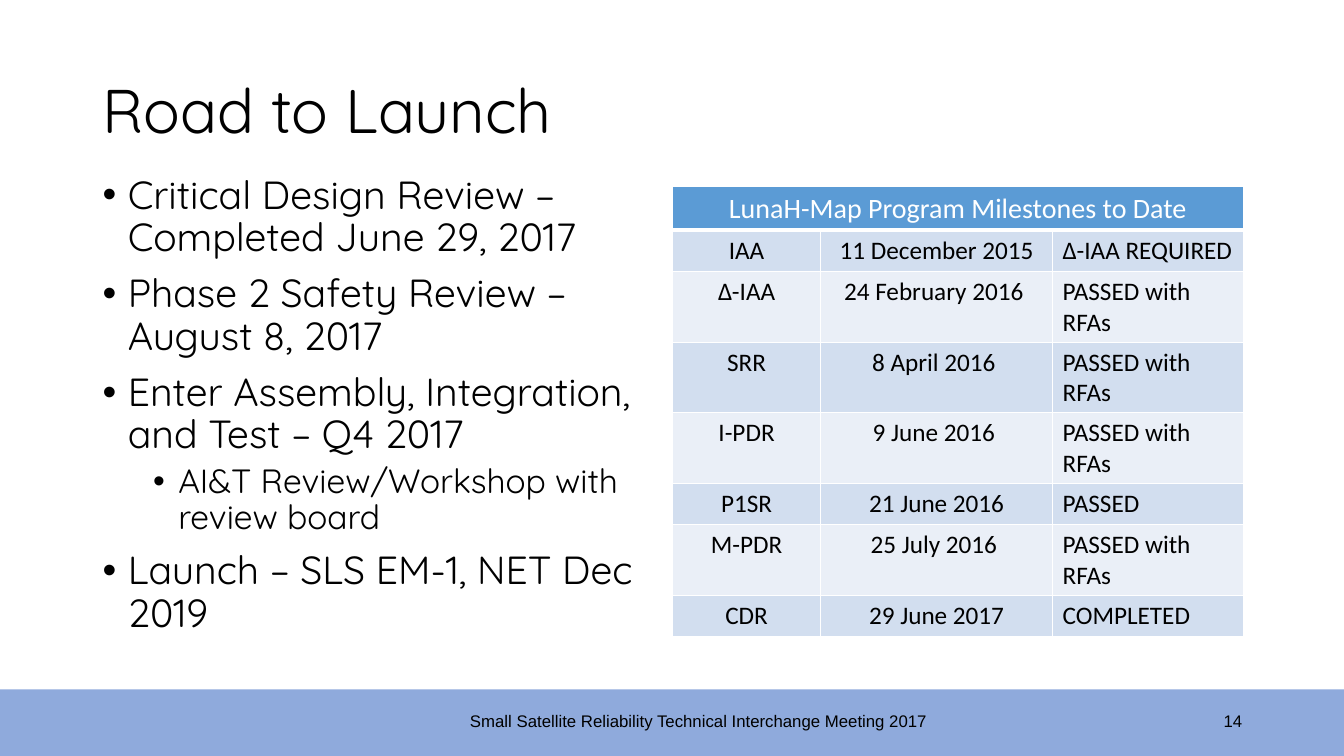
from typing import NamedTuple

from lxml import etree
from pptx import Presentation
from pptx.dml.color import RGBColor
from pptx.enum.shapes import MSO_SHAPE
from pptx.enum.text import MSO_ANCHOR, PP_ALIGN
from pptx.oxml.ns import qn
from pptx.util import Inches, Pt

RECTANGLE = MSO_SHAPE.RECTANGLE
TOP, MIDDLE = MSO_ANCHOR.TOP, MSO_ANCHOR.MIDDLE
LEFT, CENTER, RIGHT = PP_ALIGN.LEFT, PP_ALIGN.CENTER, PP_ALIGN.RIGHT

COLORS = {
    "text": "000000",
    "white": "FFFFFF",
    "footer": "8FAADC",
    "header": "5B9BD5",
    "odd_row": "D2DEEF",
    "even_row": "EAEFF7",
}


class Box(NamedTuple):
    left: float
    top: float
    width: float
    height: float


class Label(NamedTuple):
    box: Box
    text: str
    size: int
    font: str
    align: PP_ALIGN
    line_spacing: float


class Bullet(NamedTuple):
    text: str
    level: int = 0


class Milestone(NamedTuple):
    review: str
    date: str
    status: str


class BulletStyle(NamedTuple):
    size: int
    indent: float
    space_before: int


LABELS = [
    Label(Box(0.92, 0.4, 11.5, 1.45), "Road to Launch", 44, "Quicksand", LEFT, 0.9),
    Label(Box(9.42, 6.95, 3, 0.4), "14", 12, "Arial", RIGHT, 1.0),
    Label(Box(2.43, 6.95, 9, 0.4),
          "Small Satellite Reliability Technical Interchange Meeting 2017",
          12, "Arial", CENTER, 1.0),
]

BULLET_STYLES = [BulletStyle(28, 0.25, 10), BulletStyle(24, 0.75, 5)]
BULLETS = [
    Bullet("Critical Design Review – Completed June 29, 2017"),
    Bullet("Phase 2 Safety Review – August 8, 2017"),
    Bullet("Enter Assembly, Integration, and Test – Q4 2017"),
    Bullet("AI&T Review/Workshop with review board", 1),
    Bullet("Launch – SLS EM-1, NET Dec 2019"),
]

TABLE_TITLE = "LunaH-Map Program Milestones to Date"
COLUMN_WIDTHS = [1.47, 2.3, 1.89]
COLUMN_ALIGNS = [CENTER, CENTER, LEFT]
ROW_HEIGHT = 0.41
MILESTONES = [
    Milestone("IAA", "11 December 2015", "Δ-IAA REQUIRED"),
    Milestone("Δ-IAA", "24 February 2016 ", "PASSED with RFAs"),
    Milestone("SRR", "8 April 2016 ", "PASSED with RFAs"),
    Milestone("I-PDR", "9 June 2016 ", "PASSED with RFAs"),
    Milestone("P1SR", "21 June 2016", "PASSED"),
    Milestone("M-PDR", "25 July 2016 ", "PASSED with RFAs"),
    Milestone("CDR", "29 June 2017", "COMPLETED"),
]


def color(name: str) -> RGBColor:
    return RGBColor.from_string(COLORS[name])


def set_font(paragraph, name: str, size: int, color_name: str = "text") -> None:
    paragraph.font.name = name
    paragraph.font.size = Pt(size)
    paragraph.font.bold = False
    paragraph.font.color.rgb = color(color_name)


def add_frame(slide, box: Box, anchor: MSO_ANCHOR):
    frame = slide.shapes.add_textbox(*map(Inches, box)).text_frame
    frame.word_wrap = True
    frame.vertical_anchor = anchor
    return frame


def add_label(slide, label: Label) -> None:
    paragraph = add_frame(slide, label.box, MIDDLE).paragraphs[0]
    paragraph.text = label.text
    paragraph.alignment = label.align
    paragraph.line_spacing = label.line_spacing
    set_font(paragraph, label.font, label.size)


def add_footer_band(slide, box: Box) -> None:
    band = slide.shapes.add_shape(RECTANGLE, *map(Inches, box))
    band.shadow.inherit = False
    band.fill.solid()
    band.fill.fore_color.rgb = color("footer")
    band.line.fill.background()


def add_bullets(slide, box: Box, bullets: list[Bullet]) -> None:
    frame = add_frame(slide, box, TOP)
    for index, bullet in enumerate(bullets):
        paragraph = frame.add_paragraph() if index else frame.paragraphs[0]
        style = BULLET_STYLES[bullet.level]
        paragraph.text = bullet.text
        paragraph.level = bullet.level
        properties = paragraph._p.get_or_add_pPr()
        properties.set("marL", str(Inches(style.indent)))
        properties.set("indent", str(Inches(-0.25)))
        etree.SubElement(properties, qn("a:buFont"), typeface="Arial")
        etree.SubElement(properties, qn("a:buChar"), char="•")
        paragraph.line_spacing = 0.9
        paragraph.space_before = Pt(style.space_before if index else 0)
        set_font(paragraph, "Quicksand", style.size)


def add_borders(cell, bottom_width: int) -> None:
    properties = cell._tc.get_or_add_tcPr()
    for side in ("L", "R", "T", "B"):
        width = bottom_width if side == "B" else 1
        border = etree.SubElement(properties, qn(f"a:ln{side}"), w=str(Pt(width)))
        fill = etree.SubElement(border, qn("a:solidFill"))
        etree.SubElement(fill, qn("a:srgbClr"), val=COLORS["white"])


def add_milestones(slide, box: Box, milestones: list[Milestone]) -> None:
    rows = [Milestone(TABLE_TITLE, "", ""), *milestones]
    table = slide.shapes.add_table(len(rows), len(COLUMN_WIDTHS), *map(Inches, box)).table
    for column, width in zip(table.columns, COLUMN_WIDTHS):
        column.width = Inches(width)
    for row_index, milestone in enumerate(rows):
        is_header = row_index == 0
        table.rows[row_index].height = Inches(ROW_HEIGHT)
        row_fill = "header" if is_header else "odd_row" if row_index % 2 else "even_row"
        for column_index, text in enumerate(milestone):
            cell = table.cell(row_index, column_index)
            add_borders(cell, 3 if is_header else 1)
            cell.fill.solid()
            cell.fill.fore_color.rgb = color(row_fill)
            paragraph = cell.text_frame.paragraphs[0]
            paragraph.text = text
            paragraph.alignment = COLUMN_ALIGNS[column_index]
            set_font(paragraph, "Calibri", 20 if is_header else 18,
                     "white" if is_header else "text")
    table.cell(0, 0).merge(table.cell(0, len(COLUMN_WIDTHS) - 1))


def main() -> None:
    presentation = Presentation()
    presentation.slide_width = Inches(13.33)
    presentation.slide_height = Inches(7.5)
    slide = presentation.slides.add_slide(presentation.slide_layouts[6])

    # Footer band, then title and footer texts
    add_footer_band(slide, Box(-0.03, 6.84, 13.36, 0.66))
    for label in LABELS:
        add_label(slide, label)

    # Upcoming steps on the left, past milestones on the right
    add_bullets(slide, Box(0.92, 1.69, 5.67, 4.76), BULLETS)
    add_milestones(slide, Box(6.67, 1.85, sum(COLUMN_WIDTHS), ROW_HEIGHT * 8), MILESTONES)

    presentation.save("out.pptx")


if __name__ == "__main__":
    main()
